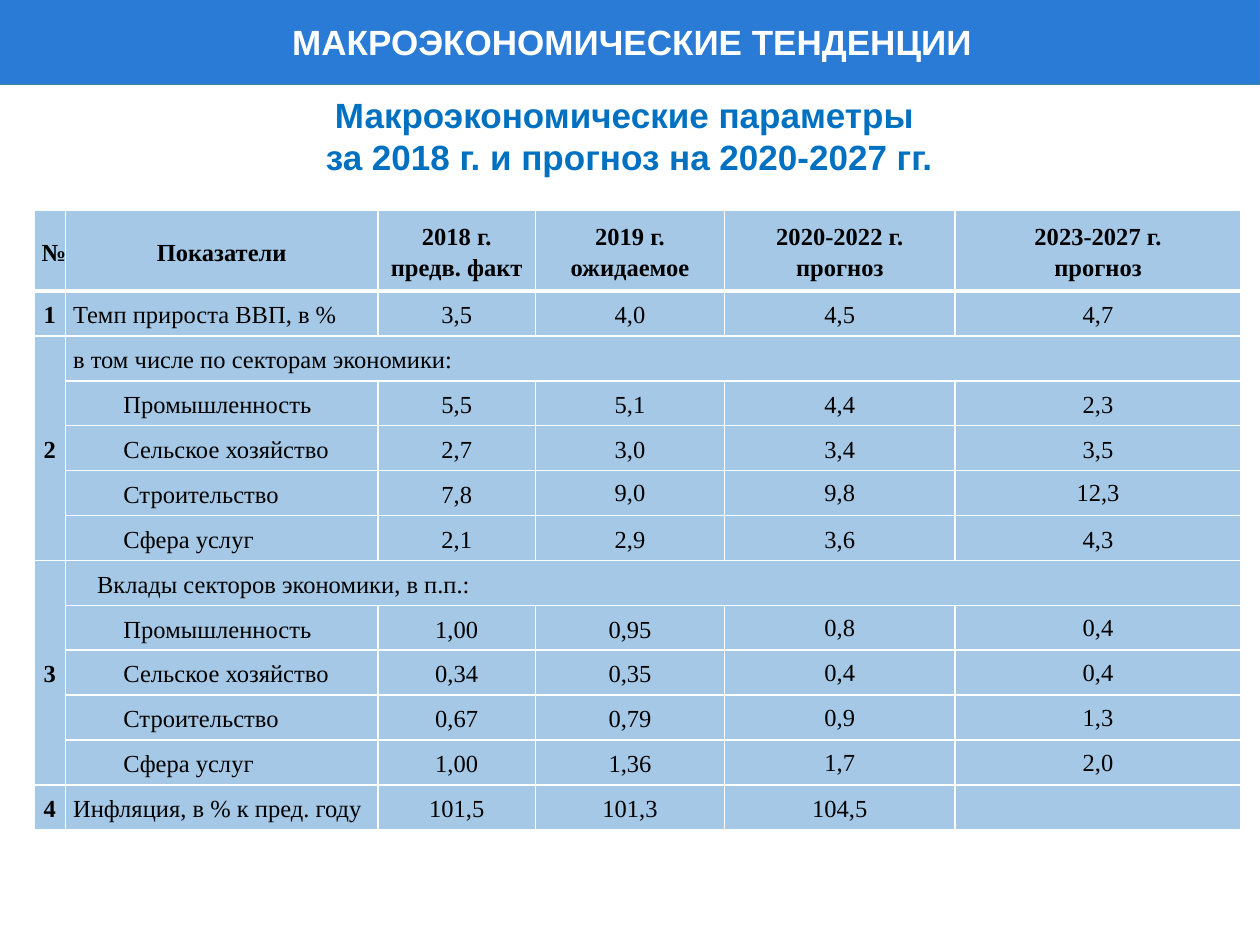
from dataclasses import dataclass

from lxml import etree
from pptx import Presentation
from pptx import util as u
from pptx.dml import color
from pptx.enum import shapes, text
from pptx.oxml import ns

WHITE = "FFFFFF"
BLACK = "000000"
CELL_BLUE = "A4C8E6"
BAR_BLUE = "2A7BD5"
BAR_EDGE = "3B8594"
SUBTITLE_BLUE = "0070C0"
MARGIN = 0.06
SECTION_INDENT = 0.19
SECTOR_INDENT = 0.4


@dataclass(frozen=True)
class Row:
    number: str
    label: str
    values: tuple[str, ...] = ()
    indent: float = 0
    single_spaced_from: int = 6
    top_inset: float = 0


COLUMN_WIDTHS = (0.25, 2.48, 1.25, 1.5, 1.83, 2.27)
TABLE_HEIGHT = 4.92
HEADER_HEIGHT = 0.64
HEADER = ("№", "Показатели", "2018 г.\nпредв. факт", "2019 г.\nожидаемое",
          "2020-2022 г.\nпрогноз", "2023-2027 г.\nпрогноз")
ROWS = (
    Row("1", "Темп прироста ВВП, в %", ("3,5", "4,0", "4,5", "4,7")),
    Row("2", "в том числе по секторам экономики:"),
    Row("", "Промышленность", ("5,5", "5,1", "4,4", "2,3"), SECTOR_INDENT),
    Row("", "Сельское хозяйство", ("2,7", "3,0", "3,4", "3,5"), SECTOR_INDENT),
    Row("", "Строительство", ("7,8", "9,0", "9,8", "12,3"), SECTOR_INDENT, 3),
    Row("", "Сфера услуг", ("2,1", "2,9", "3,6", "4,3"), SECTOR_INDENT),
    Row("3", "Вклады секторов экономики, в п.п.:", (), SECTION_INDENT),
    Row("", "Промышленность", ("1,00", "0,95", "0,8", "0,4"), SECTOR_INDENT, 4, 0.01),
    Row("", "Сельское хозяйство", ("0,34", "0,35", "0,4", "0,4"), SECTOR_INDENT, 4, 0.01),
    Row("", "Строительство", ("0,67", "0,79", "0,9", "1,3"), SECTOR_INDENT, 4, 0.01),
    Row("", "Сфера услуг", ("1,00", "1,36", "1,7", "2,0"), SECTOR_INDENT, 4, 0.01),
    Row("4", "Инфляция, в % к пред. году", ("101,5", "101,3", "104,5", "")),
)
SECTION_ROWS = (2, 7)
SECTION_LENGTH = 5


def rgb(value: str) -> color.RGBColor:
    return color.RGBColor.from_string(value)


def format_text(frame, size: float, font_name: str, hex_color: str, bold: bool,
                alignment, spacing: float = 1.0) -> None:
    for paragraph in frame.paragraphs:
        paragraph.alignment = alignment
        paragraph.line_spacing = spacing
        for run in paragraph.runs:
            run.font.size = u.Pt(size)
            run.font.name = font_name
            run.font.bold = bold
            run.font.color.rgb = rgb(hex_color)


def place(shape, left: float, top: float, width: float, height: float) -> None:
    shape.left, shape.top = u.Inches(left), u.Inches(top)
    shape.width, shape.height = u.Inches(width), u.Inches(height)


def set_borders(cell, top: float, bottom: float) -> None:
    properties = cell._tc.get_or_add_tcPr()
    for side, width in (("L", 1), ("R", 1), ("T", top), ("B", bottom)):
        line = etree.SubElement(properties, ns.qn(f"a:ln{side}"), w=str(u.Pt(width)))
        fill = etree.SubElement(line, ns.qn("a:solidFill"))
        etree.SubElement(fill, ns.qn("a:srgbClr"), val=WHITE)


def style_cell(cell, row_index: int) -> None:
    set_borders(cell, 3 if row_index == 1 else 1, 3 if row_index == 0 else 1)
    cell.fill.solid()
    cell.fill.fore_color.rgb = rgb(CELL_BLUE)
    cell.vertical_anchor = text.MSO_ANCHOR.MIDDLE
    cell.margin_left = cell.margin_right = u.Inches(MARGIN)
    cell.margin_top = cell.margin_bottom = 0


def write_cell(cell, content: str, bold: bool = False,
               alignment=text.PP_ALIGN.CENTER, spacing: float = 1.15) -> None:
    cell.text_frame.text = content
    format_text(cell.text_frame, 14, "Times New Roman", BLACK, bold, alignment, spacing)


def write_row(table, row_index: int, row: Row) -> None:
    if row.number:
        write_cell(table.cell(row_index, 0), row.number, bold=True)
    label_cell = table.cell(row_index, 1)
    label_cell.margin_left = u.Inches(MARGIN + row.indent)
    alignment = text.PP_ALIGN.LEFT if row.indent else text.PP_ALIGN.JUSTIFY
    write_cell(label_cell, row.label, alignment=alignment)
    for column, value in enumerate(row.values, start=2):
        cell = table.cell(row_index, column)
        single_spaced = column >= row.single_spaced_from
        if single_spaced:
            cell.margin_top = u.Inches(row.top_inset)
        write_cell(cell, value, spacing=1.0 if single_spaced else 1.15)


def add_heading(slide) -> None:
    bar = slide.shapes.add_shape(shapes.MSO_SHAPE.RECTANGLE, 0, 0, 0, 0)
    place(bar, -0.01, -0.01, 10.01, 0.68)
    bar.shadow.inherit = False
    bar.fill.solid()
    bar.fill.fore_color.rgb = rgb(BAR_BLUE)
    bar.line.color.rgb = rgb(BAR_EDGE)
    bar.line.width = u.Pt(1)

    title = slide.shapes.title
    title.element.addprevious(bar.element)
    place(title, 0.84, 0.11, 8.43, 0.44)
    title.text_frame.text = "МАКРОЭКОНОМИЧЕСКИЕ ТЕНДЕНЦИИ "
    title.text_frame.auto_size = text.MSO_AUTO_SIZE.NONE
    format_text(title.text_frame, 20, "Arial", WHITE, True, text.PP_ALIGN.CENTER)

    subtitle = slide.shapes.add_textbox(0, 0, 0, 0)
    place(subtitle, 0.26, 0.69, 9.47, 0.77)
    subtitle.text_frame.word_wrap = True
    subtitle.text_frame.text = ("Макроэкономические параметры \n"
                                "за 2018 г. и прогноз на 2020-2027 гг.")
    format_text(subtitle.text_frame, 20, "Arial", SUBTITLE_BLUE, True,
                text.PP_ALIGN.CENTER)


def add_indicator_table(slide) -> None:
    row_count = len(ROWS) + 1
    table = slide.shapes.add_table(
        row_count, len(COLUMN_WIDTHS), u.Inches(0.27), u.Inches(1.67),
        u.Inches(sum(COLUMN_WIDTHS)), u.Inches(TABLE_HEIGHT)).table
    table.first_row = False
    table.horz_banding = False
    for column, width in zip(table.columns, COLUMN_WIDTHS):
        column.width = u.Inches(width)
    for row_index, table_row in enumerate(table.rows):
        body_height = (TABLE_HEIGHT - HEADER_HEIGHT) / len(ROWS)
        table_row.height = u.Inches(body_height if row_index else HEADER_HEIGHT)
        for cell in table_row.cells:
            style_cell(cell, row_index)
    for first in SECTION_ROWS:
        table.cell(first, 0).merge(table.cell(first + SECTION_LENGTH - 1, 0))
        table.cell(first, 1).merge(table.cell(first, len(COLUMN_WIDTHS) - 1))
    for column, heading in enumerate(HEADER):
        write_cell(table.cell(0, column), heading, bold=True)
    for row_index, row in enumerate(ROWS, start=1):
        write_row(table, row_index, row)


def main() -> None:
    presentation = Presentation()
    presentation.slide_width = u.Inches(10)
    presentation.slide_height = u.Inches(7.5)
    slide = presentation.slides.add_slide(presentation.slide_layouts[5])
    add_heading(slide)
    add_indicator_table(slide)
    presentation.save("out.pptx")


if __name__ == "__main__":
    main()
